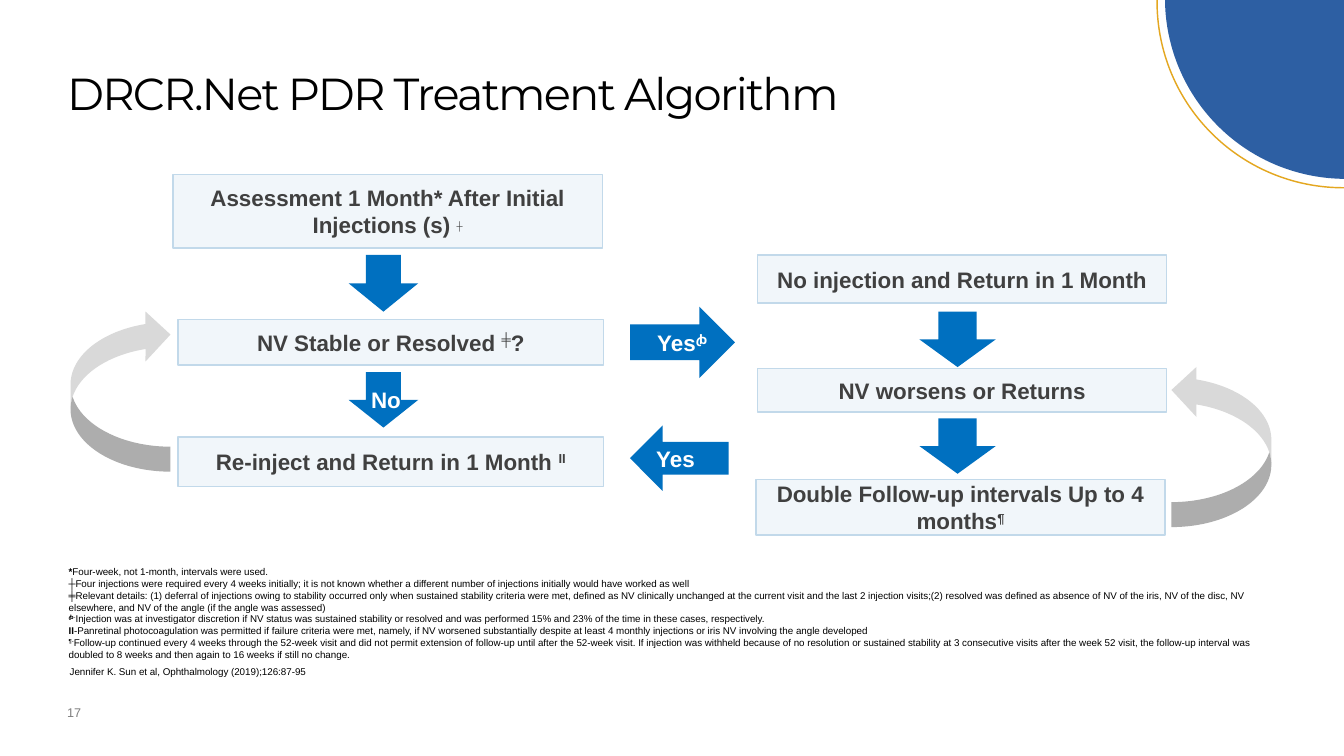
from dataclasses import dataclass
from typing import NamedTuple, Optional

from pptx import Presentation
from pptx.dml.color import RGBColor
from pptx.enum.shapes import MSO_SHAPE as Preset
from pptx.enum.text import MSO_ANCHOR as Anchor, PP_ALIGN as Align
from pptx.oxml.ns import qn
from pptx.util import Inches, Pt
from lxml.etree import SubElement


@dataclass(frozen=True)
class Theme:
    ink: str = "000000"
    box_ink: str = "404040"
    box_fill: str = "EBF2F8"
    box_line: str = "C2D9EA"
    box_opacity: int = 66
    arrow: str = "0070C0"
    arrow_ink: str = "FFFFFF"
    loop: str = "D9D9D9"
    page_ink: str = "7F7F7F"
    corner: str = "2D5FA3"
    corner_ring: str = "E4A720"
    heading_font: str = "Montserrat"
    body_font: str = "Arial"
    heading_size: float = 32
    box_size: float = 16
    dagger_size: float = 10.5
    note_size: float = 7
    page_size: float = 9
    heading_tracking: int = -130


class Area(NamedTuple):
    column: float
    row: float
    columns: float
    rows: float


class Words(NamedTuple):
    text: str
    bold: bool = False
    raised: bool = False
    size: Optional[float] = None


class Style(NamedTuple):
    size: float
    color: str
    font: str
    align: Align = Align.LEFT
    anchor: Anchor = Anchor.TOP
    inset: bool = True
    line_spacing: Optional[float] = None
    tracking: int = 0


class Box(NamedTuple):
    area: Area
    lines: list


class Arrow(NamedTuple):
    preset: Preset
    area: Area
    lines: list = []
    align: Align = Align.LEFT


class Loop(NamedTuple):
    area: Area
    mirrored: bool


class Quarter(NamedTuple):
    preset: Preset
    area: Area
    angles: tuple
    fill: Optional[str]
    line: Optional[str]


THEME = Theme()
GRID_COLUMNS, GRID_ROWS = 160, 90
LEFT_BOX, LEFT_WIDTH = 21.2, 50.65
RIGHT_BOX, RIGHT_WIDTH = 90.2, 48.7
LEFT_ARROW, LEFT_ARROW_WIDTH = 41.5, 8.3
RIGHT_ARROW, RIGHT_ARROW_WIDTH = 109.45, 9.1
BRANCH_COLUMN = 75

HEADING = Style(THEME.heading_size, THEME.ink, THEME.heading_font, anchor=Anchor.MIDDLE,
                inset=False, line_spacing=0.9, tracking=THEME.heading_tracking)
PAGE = Style(THEME.page_size, THEME.page_ink, THEME.body_font, inset=False)
CITATION = Style(THEME.note_size, THEME.ink, THEME.body_font, inset=False)
NOTE = CITATION._replace(inset=True)
BOX = Style(THEME.box_size, THEME.box_ink, THEME.body_font, Align.CENTER, Anchor.MIDDLE)
ARROW = BOX._replace(color=THEME.arrow_ink, align=Align.LEFT)
ARROW_LABEL = ARROW._replace(anchor=Anchor.TOP)

NOTES = [
    [Words("*", True), Words("Four-week, not 1-month, intervals were used.")],
    [Words("┼", True), Words("Four injections were required every 4 weeks initially; it is not known whether a different number of injections initially would have worked as well")],
    [Words("╪Relevant details: (1) deferral of injections owing to stability occurred only when sustained stability criteria were met, defined as NV clinically unchanged at the current visit and the last 2 injection visits;(2) resolved was defined as absence of NV of the iris, NV of the disc, NV elsewhere, and NV of the angle (if the angle was assessed)")],
    [Words("ꞗ", True, True), Words("-", raised=True), Words("Injection was at investigator discretion if NV status was sustained stability or resolved and was performed 15% and 23% of the time in these cases, respectively.")],
    [Words("II", True), Words("-Panretinal photocoagulation was permitted if failure criteria were met, namely, if NV worsened substantially despite at least 4 monthly injections or iris NV involving the angle developed")],
    [Words("¶", True, True), Words("-", raised=True), Words("Follow-up continued every 4 weeks through the 52-week visit and did not permit extension of follow-up until after the 52-week visit. If injection was withheld because of no resolution or sustained stability at 3 consecutive visits after the week 52 visit, the follow-up interval was doubled to 8 weeks and then again to 16 weeks if still no change.")],
]

BOXES = [
    Box(Area(20.6, 20.8, 51.1, 8.75), [
        [Words("Assessment 1 Month* After Initial", True)],
        [Words("Injections (s) ", True), Words("┼", True, True, THEME.dagger_size)]]),
    Box(Area(LEFT_BOX, 38.05, LEFT_WIDTH, 5.4), [
        [Words("NV Stable or Resolved ", True), Words("╪", True, True), Words("?", True)]]),
    Box(Area(LEFT_BOX, 52, LEFT_WIDTH, 5.9), [
        [Words("Re-inject and Return in 1 Month ", True), Words("II", True, True)]]),
    Box(Area(RIGHT_BOX, 30.35, RIGHT_WIDTH, 5.75), [[Words("No injection and Return in 1 Month", True)]]),
    Box(Area(RIGHT_BOX, 43.9, RIGHT_WIDTH, 5.15), [[Words("NV worsens or Returns", True)]]),
    Box(Area(90, 57.1, RIGHT_WIDTH, 6.6), [
        [Words("Double Follow-up intervals Up to 4 months", True), Words("¶", True, True)]]),
]

ARROWS = [
    Arrow(Preset.DOWN_ARROW, Area(LEFT_ARROW, 30.35, LEFT_ARROW_WIDTH, 6.75)),
    Arrow(Preset.DOWN_ARROW, Area(LEFT_ARROW, 44.3, LEFT_ARROW_WIDTH, 6.6)),
    Arrow(Preset.DOWN_ARROW, Area(RIGHT_ARROW, 37.1, RIGHT_ARROW_WIDTH, 6.6)),
    Arrow(Preset.DOWN_ARROW, Area(RIGHT_ARROW, 49.8, RIGHT_ARROW_WIDTH, 6.6)),
    Arrow(Preset.RIGHT_ARROW, Area(BRANCH_COLUMN, 36.5, 12.5, 8.5),
          [[Words("Yes", True), Words("ꞗ", True, True)]], Align.RIGHT),
    Arrow(Preset.LEFT_ARROW, Area(BRANCH_COLUMN, 50.65, 11.75, 7.8), [[Words("Yes", True)]]),
]

LOOPS = [Loop(Area(8.4, 36.85, 11.9, 19.3), True), Loop(Area(139.45, 43.45, 11.9, 19.3), False)]

QUARTERS = [
    Quarter(Preset.PIE, Area(138.7, -21.7, 43, 43), (108.29, 162), THEME.corner, None),
    Quarter(Preset.BLOCK_ARC, Area(137.75, -21.95, 44.3, 44.3), (107.95, 162.65, 0), None, THEME.corner_ring),
]


def place(presentation, area: Area) -> tuple:
    column = presentation.slide_width / GRID_COLUMNS
    row = presentation.slide_height / GRID_ROWS
    return (round(area.column * column), round(area.row * row),
            round(area.columns * column), round(area.rows * row))


def write(shape, lines: list, style: Style) -> None:
    frame = shape.text_frame
    frame.word_wrap = True
    frame.vertical_anchor = style.anchor
    if not style.inset:
        frame.margin_left = frame.margin_right = frame.margin_top = frame.margin_bottom = 0
    for index, line in enumerate(lines):
        paragraph = frame.add_paragraph() if index else frame.paragraphs[0]
        paragraph.alignment = style.align
        if style.line_spacing:
            paragraph.line_spacing = style.line_spacing
        for words in line:
            run = paragraph.add_run()
            run.text = words.text
            run.font.name = style.font
            run.font.size = Pt(words.size or style.size)
            run.font.bold = words.bold
            run.font.color.rgb = RGBColor.from_string(style.color)
            properties = run._r.get_or_add_rPr()
            if words.raised:
                properties.set("baseline", "30000")
            if style.tracking:
                properties.set("spc", str(style.tracking))


def add_text(presentation, slide, area: Area, lines: list, style: Style) -> None:
    write(slide.shapes.add_textbox(*place(presentation, area)), lines, style)


def add_figure(presentation, slide, preset: Preset, area: Area,
               fill: Optional[str], line: Optional[str] = None):
    shape = slide.shapes.add_shape(preset, *place(presentation, area))
    shape.shadow.inherit = False
    if fill:
        shape.fill.solid()
        shape.fill.fore_color.rgb = RGBColor.from_string(fill)
    else:
        shape.fill.background()
    if line:
        shape.line.color.rgb = RGBColor.from_string(line)
        shape.line.width = Pt(1)
    else:
        shape.line.fill.background()
    return shape


def add_box(presentation, slide, box: Box) -> None:
    shape = add_figure(presentation, slide, Preset.RECTANGLE, box.area, THEME.box_fill, THEME.box_line)
    color = shape._element.spPr.find(qn("a:solidFill")).find(qn("a:srgbClr"))
    SubElement(color, qn("a:alpha")).set("val", str(THEME.box_opacity * 1000))
    write(shape, box.lines, BOX)


def main() -> None:
    presentation = Presentation()
    presentation.slide_width, presentation.slide_height = Inches(13.33), Inches(7.5)
    slide = presentation.slides.add_slide(presentation.slide_layouts[6])
    for quarter in QUARTERS:
        shape = add_figure(presentation, slide, quarter.preset, quarter.area, quarter.fill, quarter.line)
        shape.rotation = 270
        for index, angle in enumerate(quarter.angles):
            shape.adjustments[index] = angle
    add_text(presentation, slide, Area(8, 2.4, 130.4, 18), [[Words("DRCR.Net PDR Treatment Algorithm")]], HEADING)
    for box in BOXES:
        add_box(presentation, slide, box)
    for arrow in ARROWS:
        shape = add_figure(presentation, slide, arrow.preset, arrow.area, THEME.arrow)
        write(shape, arrow.lines, ARROW._replace(align=arrow.align))
    add_text(presentation, slide, Area(43, 45.4, 8.4, 4.45), [[Words("No", True)]], ARROW_LABEL)
    for loop in LOOPS:
        shape = add_figure(presentation, slide, Preset.CURVED_RIGHT_ARROW, loop.area, THEME.loop)
        shape.rotation = 180
        if loop.mirrored:
            shape._element.spPr.find(qn("a:xfrm")).set("flipH", "1")
    add_text(presentation, slide, Area(7, 66.8, 145, 14.8), NOTES, NOTE)
    add_text(presentation, slide, Area(8.3, 79.3, 145, 3.5),
             [[Words("Jennifer K. Sun et al, Ophthalmology (2019);126:87-95")]], CITATION)
    add_text(presentation, slide, Area(8, 83.9, 4, 5.2), [[Words("17")]], PAGE)
    presentation.save("out.pptx")


if __name__ == "__main__":
    main()
